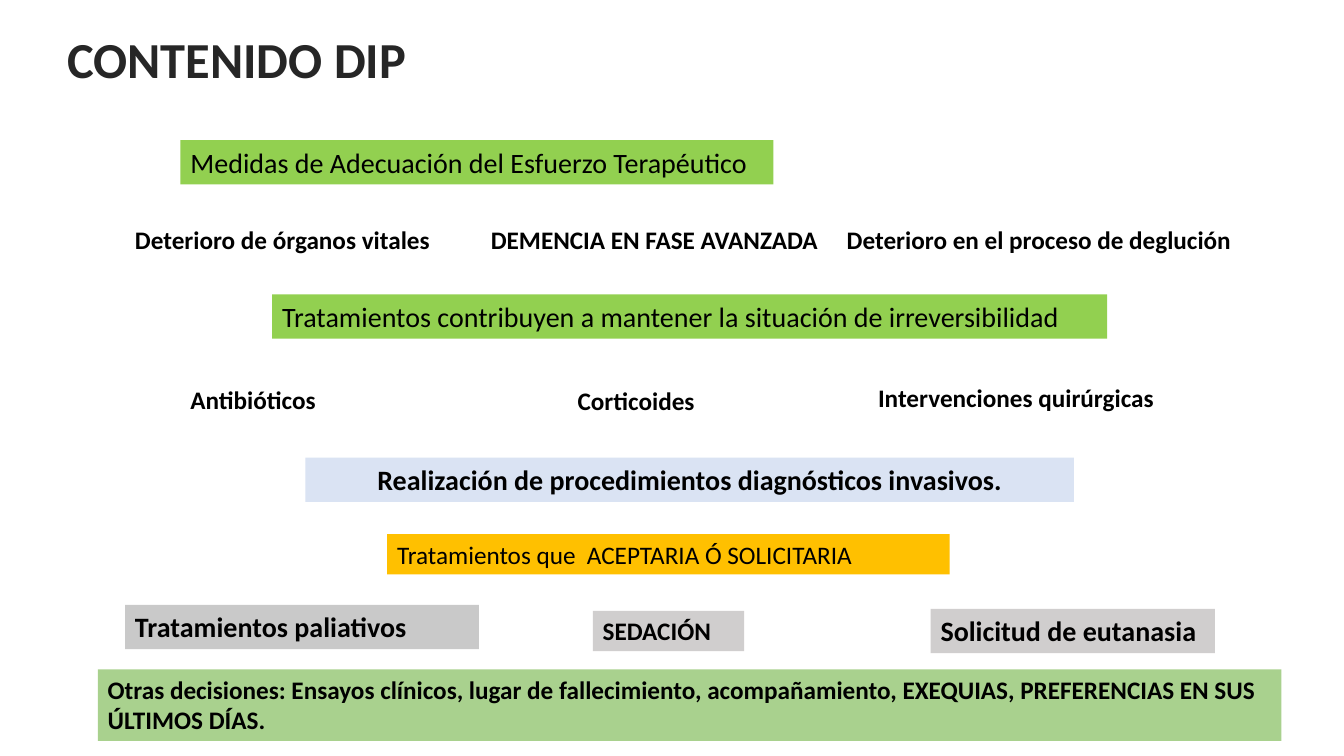
from pptx import Presentation
from pptx.dml.color import RGBColor
from pptx.enum import shapes, text
from pptx.util import Inches, Pt

FONT = "Calibri"
LEFT, CENTER = text.PP_ALIGN.LEFT, text.PP_ALIGN.CENTER
GREEN, BLUE, AMBER = "92D050", "DAE3F3", "FFC000"
SILVER, GREY, SAGE = "C9C9C9", "D0CECE", "A9D18E"

# left, top, width, height, wording, size, bold, fill, alignment
BANDS = [
    (1.79, 1.39, 5.88, 0.44, "Medidas de Adecuación del Esfuerzo Terapéutico", 20, False, GREEN, LEFT),
    (2.7, 2.92, 8.28, 0.44, "Tratamientos contribuyen a mantener la situación de irreversibilidad",
     20, False, GREEN, LEFT),
    (3.03, 4.54, 7.62, 0.44, "Realización de procedimientos diagnósticos invasivos.", 20, True, BLUE, CENTER),
    (3.84, 5.3, 5.58, 0.4, "Tratamientos que  ACEPTARIA Ó SOLICITARIA", 18, False, AMBER, LEFT),
    (1.24, 6, 3.51, 0.44, "Tratamientos paliativos", 20, True, SILVER, LEFT),
    (5.88, 6.06, 1.5, 0.4, "SEDACIÓN", 18, True, GREY, LEFT),
    (9.23, 6.04, 2.82, 0.44, "Solicitud de eutanasia", 20, True, GREY, LEFT),
    (0.97, 6.64, 11.74, 0.71,
     "Otras decisiones: Ensayos clínicos, lugar de fallecimiento, acompañamiento, "
     "EXEQUIAS, PREFERENCIAS EN SUS ÚLTIMOS DÍAS.", 18, True, SAGE, LEFT),
]

# left, top, width, wording
TREATMENTS = [
    (1.79, 3.76, 1.55, "Antibióticos"),
    (5.63, 3.77, 1.75, "Corticoides"),
    (8.61, 3.74, 3.01, "Intervenciones quirúrgicas"),
]

CONDITIONS = ["Deterioro de órganos vitales", "DEMENCIA EN FASE AVANZADA",
              "Deterioro en el proceso de deglución"]
CONDITION_STEP = 3.53


def rgb(code):
    return RGBColor.from_string(code)


def write(holder, wording, size, bold, color="000000", align=LEFT, wrap=True):
    frame = holder.text_frame
    frame.text = wording
    frame.word_wrap = wrap
    frame.vertical_anchor = text.MSO_ANCHOR.TOP
    paragraph = frame.paragraphs[0]
    paragraph.alignment = align
    paragraph.line_spacing = 1.0
    for run in paragraph.runs:
        run.font.name = FONT
        run.font.size = Pt(size)
        run.font.bold = bold
        run.font.color.rgb = rgb(color)


def add_title(slide, wording):
    title = slide.shapes.title
    title.left, title.top = Inches(0.55), Inches(0.23)
    title.width, title.height = Inches(3.6), Inches(0.71)
    write(title, wording, 36, True, "262626", CENTER, wrap=False)


def add_band(slide, left, top, width, height, wording, size, bold, fill, align):
    band = slide.shapes.add_shape(shapes.MSO_SHAPE.RECTANGLE, Inches(left), Inches(top),
                                  Inches(width), Inches(height))
    band.shadow.inherit = False
    band.fill.solid()
    band.fill.fore_color.rgb = rgb(fill)
    band.line.fill.background()
    write(band, wording, size, bold, align=align)


def add_label(slide, left, top, width, wording):
    label = slide.shapes.add_textbox(Inches(left), Inches(top), Inches(width), Inches(0.4))
    write(label, wording, 18, True)
    return label


def add_tab_stops(label, step, count):
    properties = label.text_frame.paragraphs[0]._p.get_or_add_pPr()
    stops = properties.makeelement(
        "{http://schemas.openxmlformats.org/drawingml/2006/main}tabLst", {})
    for index in range(1, count + 1):
        stop = stops.makeelement(stops.tag.replace("tabLst", "tab"),
                                 {"pos": str(Inches(step * index)), "algn": "l"})
        stops.append(stop)
    properties.append(stops)


def main():
    deck = Presentation()
    deck.slide_width, deck.slide_height = Inches(13.33), Inches(7.5)
    slide = deck.slides.add_slide(deck.slide_layouts[5])

    add_title(slide, "CONTENIDO DIP")

    # Coloured bands
    for band in BANDS:
        add_band(slide, *band)

    # Conditions in three tabbed columns
    conditions = add_label(slide, 1.24, 2.18, 11.6, "\t".join(CONDITIONS))
    add_tab_stops(conditions, CONDITION_STEP, len(CONDITIONS) - 1)

    # Treatments
    for treatment in TREATMENTS:
        add_label(slide, *treatment)

    deck.save("out.pptx")


if __name__ == "__main__":
    main()
